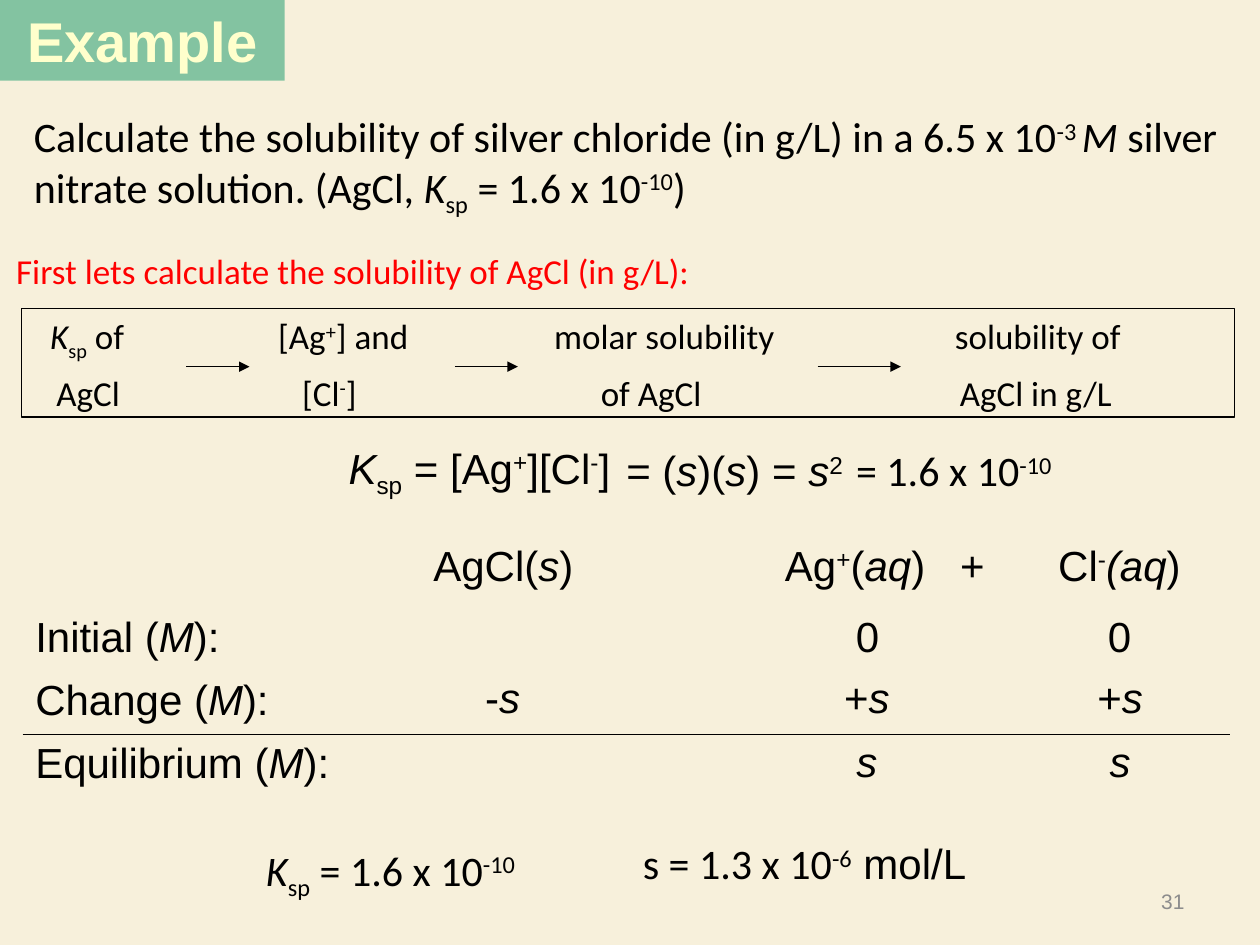
import pptx
import pptx.util
import pptx.dml.color
import pptx.enum.shapes
import pptx.enum.text
import pptx.oxml
import pptx.oxml.ns
from pptx.util import Inches

COLORS = {"page": "F7F0DB", "banner": "109769", "title": "FFFFCC",
          "ink": "000000", "red": "FF0000", "number": "8C8C8C"}
ALIGN = {"l": pptx.enum.text.PP_ALIGN.LEFT, "c": pptx.enum.text.PP_ALIGN.CENTER,
         "r": pptx.enum.text.PP_ALIGN.RIGHT}
SHIFT = {"^": "30000", "_": "-25000"}

# A run is (text, marks): i italic, b bold, ^ superscript, _ subscript, A Arial
K_SP = [("K", "i"), ("sp", "_")]
K_VALUE = [(" = 1.6 x 10", ""), ("-10", "^")]
QUESTION = [("Calculate the solubility of silver chloride (in g/L) in a 6.5 x 10", ""),
            ("-3 ", "^"), ("M ", "i"), ("silver nitrate solution. (AgCl, ", ""),
            *K_SP, *K_VALUE, (")", "")]
FIRST_STEP = [("First lets calculate the solubility of AgCl (in g/L):", "")]
PRODUCT = [*K_SP, (" = [Ag", ""), ("+", "^"), ("][Cl", ""), ("-", "^"), ("]", "")]
SQUARE = [("= (", ""), ("s", "i"), (")(", ""), ("s", "i"), (") = ", ""),
          ("s", "i"), ("2", "^")]
RESULT = [("s = 1.3 x 10", ""), ("-6", "^"), (" mol/L", "A")]
MINUS_S, PLUS_S, JUST_S = [("-", ""), ("s", "i")], [("+", ""), ("s", "i")], [("s", "i")]

# box, runs, font, size, colour, alignment, wrap
TEXTS = [
    ((7.17, 6.95, 2.33, 0.4), [("31", "")], "Arial", 12, "number", "r", True),
    ((0.17, 0.83, 9.63, 0.99), QUESTION, "Calibri", 24, "ink", "l", True),
    ((0.03, 1.93, 5.6, 0.44), FIRST_STEP, "Calibri", 20, "red", "l", False),
    ((2.47, 3.46, 2.67, 0.5), PRODUCT, "Arial", 24, "ink", "c", True),
    ((4.8, 3.48, 2.06, 0.5), SQUARE, "Arial", 24, "ink", "c", True),
    ((6.67, 3.48, 1.8, 0.5), [("= 1.6 x 10", ""), ("-10", "^")],
     "Calibri", 24, "ink", "c", False),
    ((1.97, 6.65, 2.26, 0.5), K_SP + K_VALUE, "Calibri", 24, "ink", "c", False),
    ((4.98, 6.6, 2.81, 0.5), RESULT, "Calibri", 24, "ink", "c", False),
]

# tab stops, runs
FLOW_BOX = (0.17, 2.45, 9.63, 0.86)
FLOW_LINES = [
    ((0.13, 1.94, 4.13, 7.31),
     [("\tK", "i"), ("sp", "_"), (" of\t[Ag", ""), ("+", "^"),
      ("] and\tmolar solubility\tsolubility of", "")]),
    ((0.18, 2.13, 4.5, 7.35),
     [("\tAgCl\t[Cl", ""), ("-", "^"), ("]\tof AgCl\tAgCl in g/L", "")]),
]
FLOW_ARROWS = [(1.48, 1.98), (3.61, 4.11), (6.49, 7.15)]
FLOW_ARROW_Y = 2.91

TABLE_AT = (0.18, 4.26)
COLUMNS = [2.58, 2.47, 0.53, 2.25, 1.75]
ROWS = [0.57, 0.5, 0.5, 0.57]
SILVER_TABS = (0.37, 1.76)
CELLS = {
    (0, 1): [("AgCl(", ""), ("s", "i"), (")", "")],
    (0, 3): [("\tAg", ""), ("+", "^"), ("(", ""), ("aq", "i"), (")\t+", "")],
    (0, 4): [("Cl", ""), ("-", "^"), ("(aq", "i"), (")", "")],
    (1, 3): [("0", "")],
    (1, 4): [("0", "")],
}
for row, label in enumerate(("Initial", "Change", "Equilibrium"), 1):
    CELLS[row, 0] = [(label + " (", ""), ("M", "i"), ("):", "")]

# runs, centre, top, width
CHANGES = [(MINUS_S, 3.99, 5.28, 0.48), (PLUS_S, 6.88, 5.28, 0.57),
           (PLUS_S, 8.89, 5.28, 0.57), (JUST_S, 8.89, 5.79, 0.37),
           (JUST_S, 6.88, 5.79, 0.37)]
TEXTS += [((x - w / 2, y, w, 0.5), runs, "Arial", 24, "ink", "c", False)
          for runs, x, y, w in CHANGES]


def rgb(name):
    return pptx.dml.color.RGBColor.from_string(COLORS[name])


def child(parent, tag, **attrs):
    return pptx.oxml.ns and _append(parent, tag, attrs)


def _append(parent, tag, attrs):
    e = parent.makeelement(pptx.oxml.ns.qn(tag), attrs)
    parent.append(e)
    return e


def write(p, runs, font, size, color, align="l", tabs=()):
    p.alignment = ALIGN[align]
    if tabs:
        stops = child(p._p.get_or_add_pPr(), "a:tabLst")
        for x in tabs:
            child(stops, "a:tab", pos=str(Inches(x)), algn="l")
    for text, marks in runs:
        r = p.add_run()
        r.text = text
        r.font.name = "Arial" if "A" in marks else font
        r.font.size = pptx.util.Pt(size)
        r.font.color.rgb = rgb(color)
        r.font.italic = "i" in marks
        r.font.bold = "b" in marks
        for mark in SHIFT.keys() & set(marks):
            r.font._element.set("baseline", SHIFT[mark])


def add_rect(shapes, box):
    sp = shapes.add_shape(pptx.enum.shapes.MSO_SHAPE.RECTANGLE, *map(Inches, box))
    sp.shadow.inherit = False
    sp.text_frame.word_wrap = True
    sp.text_frame.vertical_anchor = pptx.enum.text.MSO_ANCHOR.TOP
    return sp


def add_banner(s):
    sp = add_rect(s.shapes, (0, 0, 2.26, 0.64))
    sp.fill.solid()
    sp.fill.fore_color.rgb = rgb("banner")
    child(sp.fill._xPr.find(".//" + pptx.oxml.ns.qn("a:srgbClr")), "a:alpha", val="50000")
    sp.line.fill.background()
    write(sp.text_frame.paragraphs[0], [("Example", "b")], "Arial", 32, "title", "c")


def add_flow(s):
    shapes = s.shapes.add_group_shape().shapes
    sp = add_rect(shapes, FLOW_BOX)
    sp.fill.background()
    sp.line.color.rgb = rgb("ink")
    sp.line.width = pptx.util.Pt(0.75)
    tf = sp.text_frame
    for i, (tabs, runs) in enumerate(FLOW_LINES):
        p = tf.add_paragraph() if i else tf.paragraphs[0]
        if i:
            p.space_before = pptx.util.Pt(5)
        write(p, runs, "Calibri", 20, "ink", tabs=tabs)
    for x1, x2 in FLOW_ARROWS:
        arrow = shapes.add_connector(pptx.enum.shapes.MSO_CONNECTOR.STRAIGHT, *map(
            Inches, (x1, FLOW_ARROW_Y, x2, FLOW_ARROW_Y)))
        arrow.line.color.rgb = rgb("ink")
        arrow.line.width = pptx.util.Pt(0.75)
        child(arrow.line._get_or_add_ln(), "a:tailEnd", type="triangle")
        child(arrow._element.spPr, "a:effectLst")


def add_border(cell, side):
    ln = child(cell._tc.get_or_add_tcPr(), side, w="12700")
    child(child(ln, "a:solidFill"), "a:srgbClr", val=COLORS["ink"])


def add_ice_table(s):
    """Add the initial, change and equilibrium table."""
    size = sum(COLUMNS), sum(ROWS)
    table = s.shapes.add_table(len(ROWS), len(COLUMNS),
                               *map(Inches, TABLE_AT + size)).table
    table.first_row = table.horz_banding = False
    table._tbl.tblPr.find(pptx.oxml.ns.qn("a:tableStyleId")).text = \
        "{2D5ABB26-0587-4C30-8999-92F81FD0307C}"
    for column, width in zip(table.columns, COLUMNS):
        column.width = Inches(width)
    for r, height in enumerate(ROWS):
        table.rows[r].height = Inches(height)
        for c in range(len(COLUMNS)):
            cell = table.cell(r, c)
            if r in (2, 3):
                add_border(cell, "a:lnB" if r == 2 else "a:lnT")
            cell.fill.background()
            tabs = SILVER_TABS if (r, c) == (0, 3) else ()
            write(cell.text_frame.paragraphs[0], CELLS.get((r, c), []), "Arial", 24,
                  "ink", "l" if c == 0 or tabs else "c", tabs)


def main():
    prs = pptx.Presentation()
    prs.slide_width, prs.slide_height = Inches(10), Inches(7.5)
    s = prs.slides.add_slide(prs.slide_layouts[6])
    s.background.fill.solid()
    s.background.fill.fore_color.rgb = rgb("page")
    add_banner(s)
    add_flow(s)
    add_ice_table(s)
    for box, runs, font, size, color, align, wrap in TEXTS:
        tf = s.shapes.add_textbox(*map(Inches, box)).text_frame
        tf.word_wrap = wrap
        if color == "number":
            tf.vertical_anchor = pptx.enum.text.MSO_ANCHOR.MIDDLE
        write(tf.paragraphs[0], runs, font, size, color, align)
    prs.save("out.pptx")


if __name__ == "__main__":
    main()
